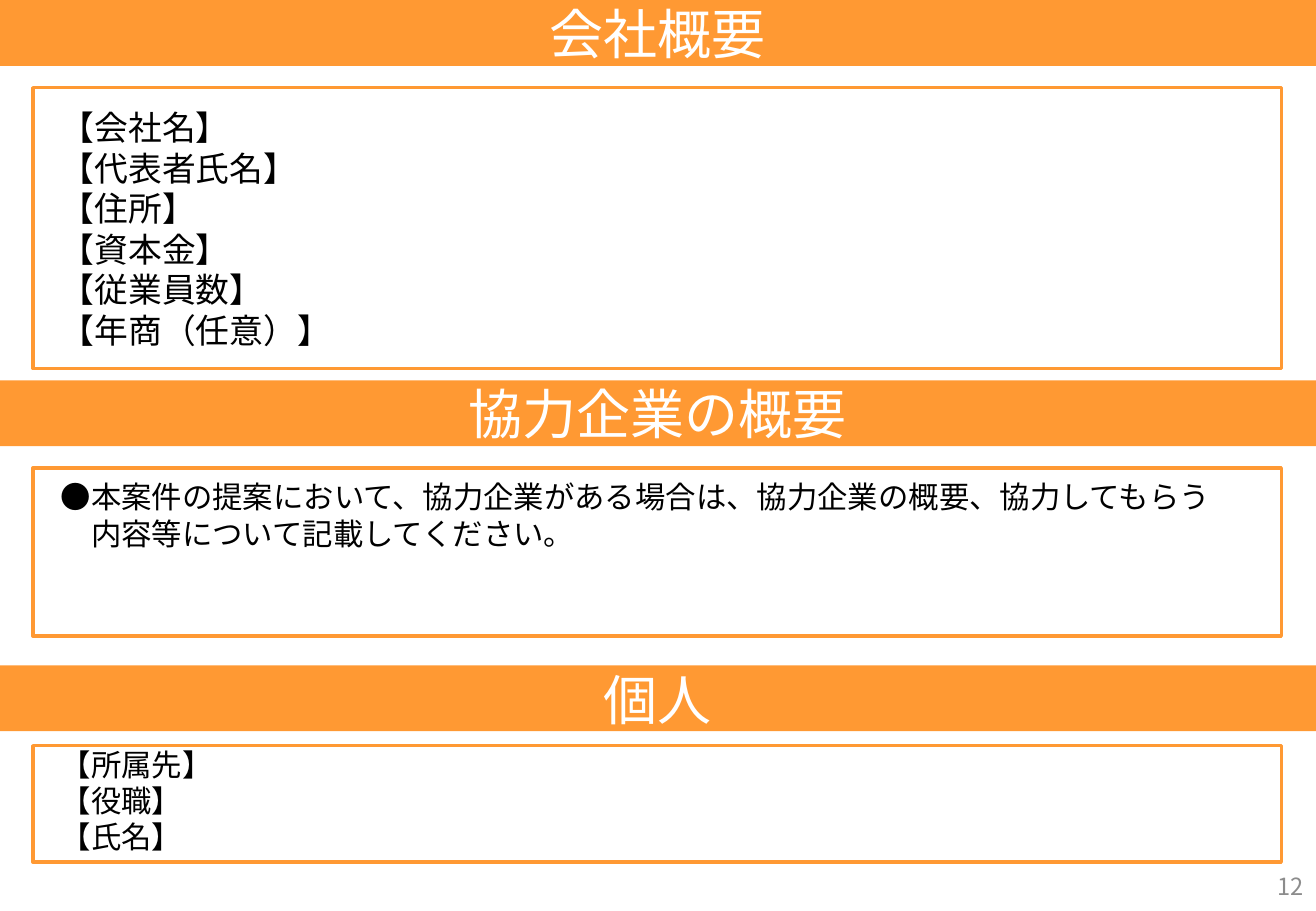
from dataclasses import dataclass

from lxml import etree
from pptx import Presentation
from pptx.dml.color import RGBColor
from pptx.enum import lang, shapes, text
from pptx.oxml import ns
from pptx.shapes.autoshape import Shape
from pptx.slide import Slide
from pptx.util import Pt


@dataclass(frozen=True)
class Theme:
    font: str = "Noto Sans CJK JP"
    accent: RGBColor = RGBColor(0xFF, 0x99, 0x33)
    heading: RGBColor = RGBColor(0xFF, 0xFF, 0xFF)
    body: RGBColor = RGBColor(0, 0, 0)
    muted: RGBColor = RGBColor(0x8C, 0x8C, 0x8C)
    heading_size: float = 32
    large_size: float = 20
    body_size: float = 18
    number_size: float = 14


@dataclass(frozen=True)
class Box:
    left: float
    top: float
    width: float
    height: float

    def lengths(self) -> tuple[Pt, Pt, Pt, Pt]:
        return Pt(self.left), Pt(self.top), Pt(self.width), Pt(self.height)


@dataclass(frozen=True)
class Section:
    heading: str
    banner_top: float
    frame_top: float
    frame_height: float
    body: str
    body_box: Box
    size: float
    hanging: float = 0


THEME = Theme()
SLIDE_W, SLIDE_H = 780, 540
BANNER_H = 39
FRAME_LEFT, FRAME_W = 19.5, 740
BODY_LEFT = 36

SECTIONS = [
    Section("会社概要", 0, 52, 166.5,
            "【会社名】\n【代表者氏名】\n【住所】\n【資本金】\n【従業員数】\n【年商（任意）】",
            Box(BODY_LEFT, 63.5, 162, 145.5), THEME.large_size),
    Section("協力企業の概要", 225.5, 277.5, 99.5,
            "●本案件の提案において、協力企業がある場合は、協力企業の概要、協力してもらう\v"
            "内容等について記載してください。",
            Box(BODY_LEFT, 283.5, 690.5, 44), THEME.body_size, hanging=18),
    Section("個人", 394.5, 442, 69,
            "【所属先】\n【役職】\n【氏名】",
            Box(BODY_LEFT, 442, 91, 65.5), THEME.body_size),
]


def write(sp: Shape, content: str, size: float, color: RGBColor,
          align: text.PP_ALIGN = text.PP_ALIGN.LEFT,
          anchor: text.MSO_ANCHOR = text.MSO_ANCHOR.TOP, inset: float = 0) -> None:
    tf = sp.text_frame
    tf.text = content
    tf.word_wrap = True
    tf.auto_size = text.MSO_AUTO_SIZE.NONE
    tf.vertical_anchor = anchor
    tf.margin_left = tf.margin_right = Pt(inset)
    tf.margin_top = tf.margin_bottom = Pt(inset / 2)
    for p in tf.paragraphs:
        p.alignment = align
        for r in p.runs:
            r.font.size = Pt(size)
            r.font.color.rgb = color
            r.font.name = THEME.font
            r.font.language_id = lang.MSO_LANGUAGE_ID.JAPANESE
            ea = etree.SubElement(r.font._element, ns.qn("a:ea"))
            ea.set("typeface", THEME.font)


def add_rectangle(slide: Slide, box: Box) -> Shape:
    sp = slide.shapes.add_shape(shapes.MSO_SHAPE.RECTANGLE, *box.lengths())
    sp.shadow.inherit = False
    return sp


def format_banner(sp: Shape, heading: str) -> None:
    sp.fill.solid()
    sp.fill.fore_color.rgb = THEME.accent
    sp.line.fill.background()
    write(sp, heading, THEME.heading_size, THEME.heading,
          text.PP_ALIGN.CENTER, text.MSO_ANCHOR.MIDDLE)


def add_section(slide: Slide, section: Section, is_title: bool) -> None:
    """Draw banner, frame and body; the first banner is the slide title."""
    banner_box = Box(0, section.banner_top, SLIDE_W, BANNER_H)
    if is_title:
        banner = slide.shapes.title
        banner.left, banner.top, banner.width, banner.height = banner_box.lengths()
    else:
        banner = add_rectangle(slide, banner_box)
    format_banner(banner, section.heading)

    frame = add_rectangle(
        slide, Box(FRAME_LEFT, section.frame_top, FRAME_W, section.frame_height))
    frame.fill.background()
    frame.line.color.rgb = THEME.accent
    frame.line.width = Pt(2)

    body = slide.shapes.add_textbox(*section.body_box.lengths())
    write(body, section.body, section.size, THEME.body)
    if section.hanging:
        for p in body.text_frame.paragraphs:
            pPr = p._p.get_or_add_pPr()
            pPr.set("marL", str(Pt(section.hanging)))
            pPr.set("indent", str(-Pt(section.hanging)))


def main() -> None:
    prs = Presentation()
    prs.slide_width, prs.slide_height = Pt(SLIDE_W), Pt(SLIDE_H)
    slide = prs.slides.add_slide(prs.slide_layouts.get_by_name("Title Only"))
    for index, section in enumerate(SECTIONS):
        add_section(slide, section, is_title=index == 0)
    number = slide.shapes.add_textbox(*Box(604.5, 511, 175.5, 29).lengths())
    write(number, "12", THEME.number_size, THEME.muted,
          text.PP_ALIGN.RIGHT, text.MSO_ANCHOR.MIDDLE, inset=7.2)
    prs.save("out.pptx")


if __name__ == "__main__":
    main()
